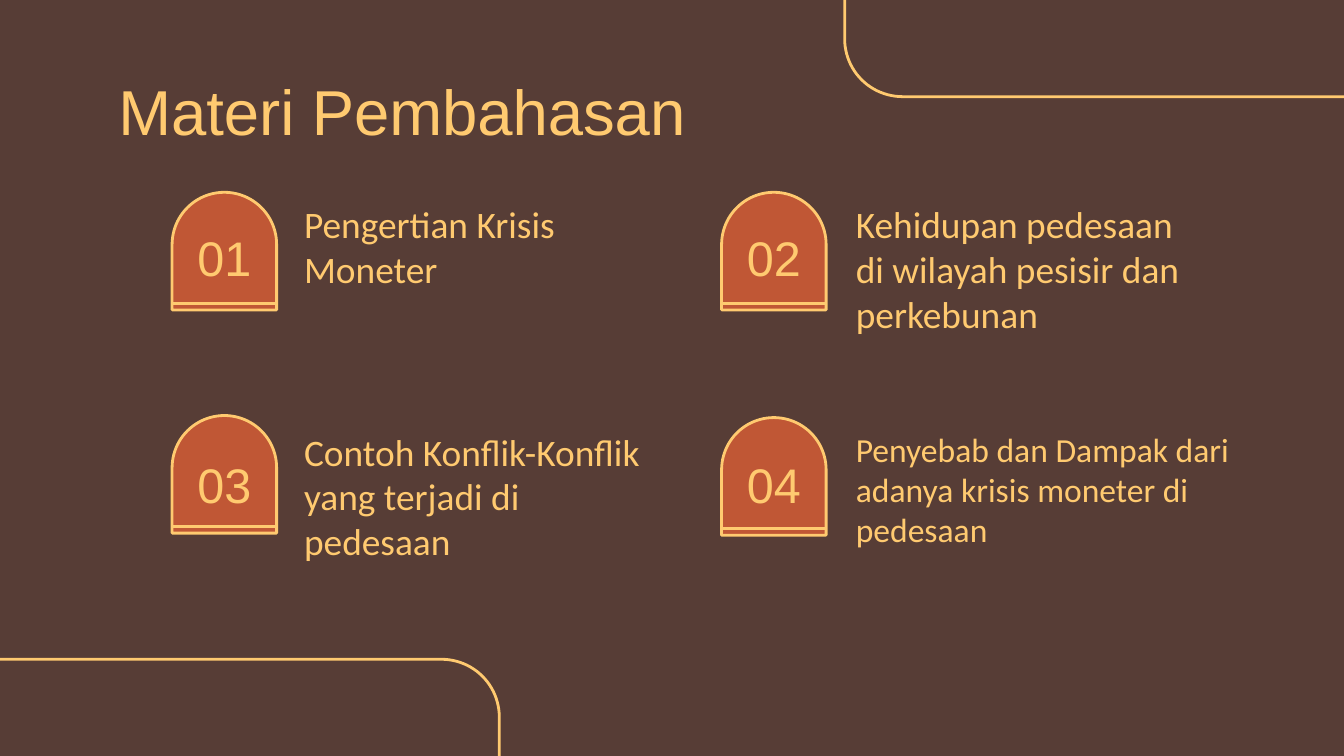
import math

import pptx
import pptx.dml.color
import pptx.enum.shapes
import pptx.enum.text
import pptx.oxml
import pptx.util

Pt = pptx.util.Pt
Align = pptx.enum.text.PP_ALIGN
Anchor = pptx.enum.text.MSO_ANCHOR

BROWN = pptx.dml.color.RGBColor(0x57, 0x3D, 0x36)
RUST = pptx.dml.color.RGBColor(0xC0, 0x57, 0x35)
GOLD = pptx.dml.color.RGBColor(0xFF, 0xCA, 0x70)

PAGE_WIDTH, PAGE_HEIGHT = 720, 405
CORNER_WIDTH, CORNER_HEIGHT, CORNER_RADIUS = 267.5, 51.8, 31
ARC_STEPS = 24
BADGE_WIDTH, BADGE_HEIGHT, BADGE_RULE = 56, 63, 59.6
INSET = 7.2
COLUMNS = (92.2, 386.6)
TOPICS = [
    ("01", "Pengertian Krisis Moneter", 0, 103, 100.8, 201, 72, 20),
    ("02", "Kehidupan pedesaan di wilayah pesisir dan perkebunan", 1, 103, 100.8, 201, 72, 20),
    ("03", "Contoh Konflik-Konflik yang terjadi di pedesaan", 0, 222.6, 222.5, 201, 72, 20),
    ("04", "Penyebab dan Dampak dari adanya krisis moneter di pedesaan", 1, 223.7, 222.5, 224.6, 97.2, 18),
]


def place(shape, left, top, width, height):
    shape.left, shape.top = Pt(left), Pt(top)
    shape.width, shape.height = Pt(width), Pt(height)


def write(box, text, font, size, align=Align.LEFT, anchor=Anchor.TOP, top_inset=INSET):
    frame = box.text_frame
    frame.word_wrap = True
    frame.auto_size = pptx.enum.text.MSO_AUTO_SIZE.NONE
    frame.vertical_anchor = anchor
    frame.margin_left = frame.margin_right = frame.margin_bottom = Pt(INSET)
    frame.margin_top = Pt(top_inset)
    para = frame.paragraphs[0]
    para.alignment = align
    span = para.add_run()
    span.text = text
    span.font.name = font
    span.font.size = Pt(size)
    span.font.color.rgb = GOLD


def outline(shape):
    shape.line.color.rgb = GOLD
    shape.line.width = Pt(1.5)


def add_corner(page, left, top, turned):
    points = [(0, 0)]
    for step in range(ARC_STEPS + 1):
        angle = math.pi / 2 * step / ARC_STEPS
        points.append((CORNER_WIDTH - CORNER_RADIUS * (1 - math.sin(angle)),
                       CORNER_RADIUS * (1 - math.cos(angle))))
    points.append((CORNER_WIDTH, CORNER_HEIGHT))
    if turned:
        points = [(CORNER_WIDTH - x, CORNER_HEIGHT - y) for x, y in points]
    points = [(Pt(left + x), Pt(top + y)) for x, y in points]
    builder = page.shapes.build_freeform(*points[0])
    builder.add_line_segments(points[1:], close=False)
    curve = builder.convert_to_shape()
    curve.shadow.inherit = False
    curve.fill.background()
    outline(curve)


def add_badge(page, left, top):
    group = page.shapes.add_group_shape()
    arch = group.shapes.add_shape(
        pptx.enum.shapes.MSO_SHAPE.ROUND_2_SAME_RECTANGLE,
        Pt(left), Pt(top), Pt(BADGE_WIDTH), Pt(BADGE_HEIGHT))
    arch.adjustments[0] = 0.5
    arch.adjustments[1] = 0
    arch.shadow.inherit = False
    arch.fill.solid()
    arch.fill.fore_color.rgb = RUST
    outline(arch)
    rule_top = Pt(top + BADGE_RULE)
    rule = group.shapes.add_connector(
        pptx.enum.shapes.MSO_CONNECTOR.STRAIGHT,
        Pt(left), rule_top, Pt(left + BADGE_WIDTH), rule_top)
    outline(rule)
    properties = rule._element.spPr
    properties.append(properties.makeelement(pptx.oxml.ns.qn("a:effectLst"), {}))


def add_topic(page, number, text, column, badge_top, text_top, width, height, size):
    left = COLUMNS[column]
    add_badge(page, left, badge_top)
    label_top = text_top + 17.3
    label = page.shapes.add_textbox(Pt(left), Pt(label_top), Pt(BADGE_WIDTH), Pt(36.7))
    write(label, number, "Arial", 26, Align.CENTER, Anchor.MIDDLE, 10)
    box = page.shapes.add_textbox(Pt(left + 63.6 + column * 1.2), Pt(text_top), Pt(width), Pt(height))
    write(box, text, "Calibri", size)


def add_title(page, left, top, width, height):
    title = page.shapes.title
    place(title, left, top, width, height)
    write(title, "Materi Pembahasan", "Arial", 34, top_inset=11)


def main():
    deck = pptx.Presentation()
    deck.slide_width, deck.slide_height = Pt(PAGE_WIDTH), Pt(PAGE_HEIGHT)
    page = deck.slides.add_slide(deck.slide_layouts.get_by_name("Title Only"))
    page.background.fill.solid()
    page.background.fill.fore_color.rgb = BROWN
    add_corner(page, 0, PAGE_HEIGHT - CORNER_HEIGHT, False)
    add_corner(page, PAGE_WIDTH - CORNER_WIDTH, 0, True)
    add_title(page, 56.2, 27.4, 607.7, 44.6)
    for topic in TOPICS:
        add_topic(page, *topic)
    deck.save("out.pptx")


if __name__ == "__main__":
    main()
